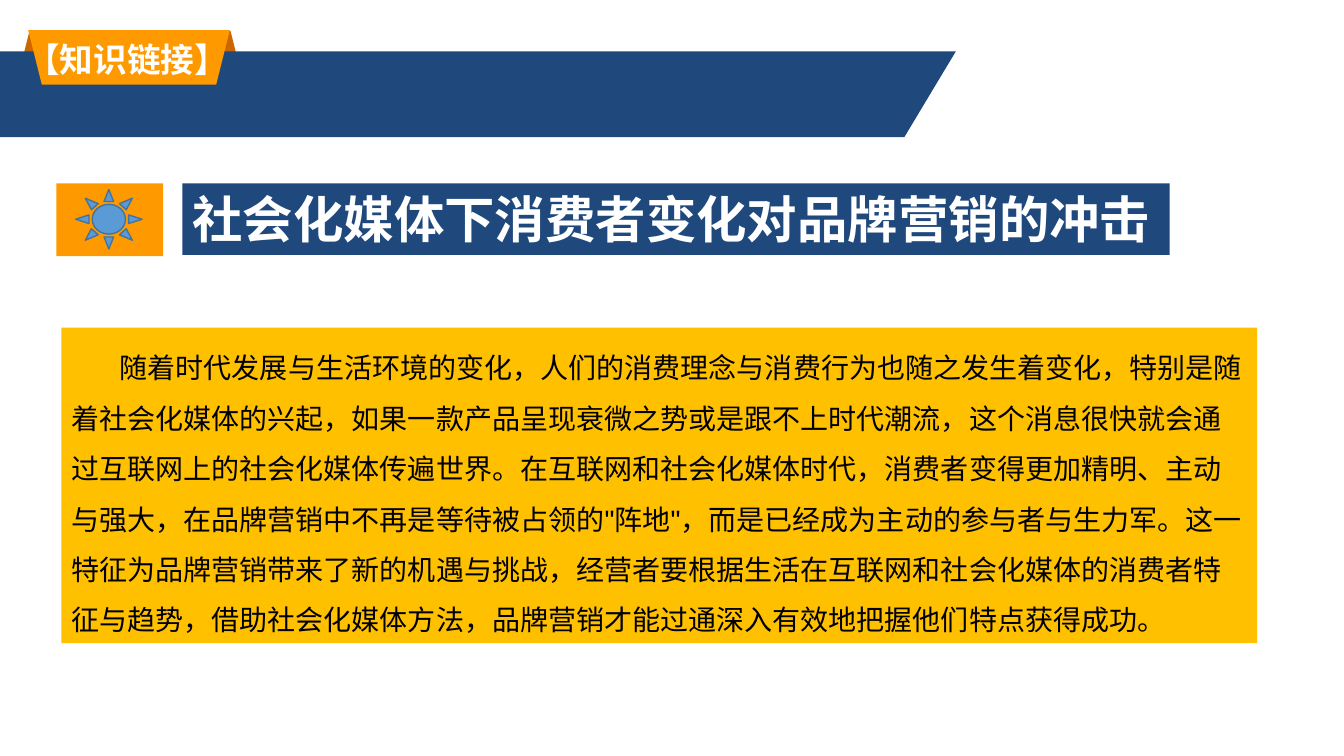
from dataclasses import dataclass

from pptx import Presentation
from pptx.enum import shapes, text
from pptx.dml.color import RGBColor
from pptx.util import Inches, Pt

COLORS = {
    "navy": "1F487C",
    "orange": "FF9900",
    "fold": "CC6600",
    "amber": "FFC000",
    "sun": "5B9BD5",
    "sun_line": "43739E",
    "white": "FFFFFF",
    "black": "000000",
}
FONT = "Arial"
BODY = (
    "随着时代发展与生活环境的变化，人们的消费理念与消费行为也随之发生着变化，"
    "特别是随着社会化媒体的兴起，如果一款产品呈现衰微之势或是跟不上时代潮流，"
    "这个消息很快就会通过互联网上的社会化媒体传遍世界。"
    "在互联网和社会化媒体时代，消费者变得更加精明、主动与强大，"
    "在品牌营销中不再是等待被占领的\"阵地\"，而是已经成为主动的参与者与生力军。"
    "这一特征为品牌营销带来了新的机遇与挑战，"
    "经营者要根据生活在互联网和社会化媒体的消费者特征与趋势，"
    "借助社会化媒体方法，品牌营销才能过通深入有效地把握他们特点获得成功。"
)
KIND = shapes.MSO_SHAPE


@dataclass
class Block:
    kind: shapes.MSO_SHAPE
    left: float
    top: float
    width: float
    height: float
    fill: str
    line: str | None = None
    flipped: bool = False


def rgb(name: str) -> RGBColor:
    return RGBColor.from_string(COLORS[name])


def paint(shape, fill: str, line: str | None = None) -> None:
    shape.shadow.inherit = False
    shape.fill.solid()
    shape.fill.fore_color.rgb = rgb(fill)
    if line:
        shape.line.color.rgb = rgb(line)
        shape.line.width = Pt(1)
    else:
        shape.line.fill.background()


def add_block(slide, block: Block):
    shape = slide.shapes.add_shape(
        block.kind, Inches(block.left), Inches(block.top),
        Inches(block.width), Inches(block.height))
    paint(shape, block.fill, block.line)
    if block.flipped:
        shape._element.spPr.xfrm.set("flipV", "1")
    return shape


def add_banner(slide) -> None:
    """Draw the header band with its slanted right end."""
    builder = slide.shapes.build_freeform(0, Inches(0.51))
    corners = [(9.48, 0.51), (8.97, 1.36), (0, 1.36)]
    builder.add_line_segments([(Inches(x), Inches(y)) for x, y in corners])
    paint(builder.convert_to_shape(), "navy")


def write(shape, wording: str, size: int, color: str, bold: bool = False,
          align=text.PP_ALIGN.LEFT, anchor=text.MSO_ANCHOR.TOP, wrap: bool = True):
    frame = shape.text_frame
    frame.word_wrap = wrap
    frame.vertical_anchor = anchor
    paragraph = frame.paragraphs[0]
    paragraph.text = wording
    paragraph.alignment = align
    font = paragraph.font
    font.name, font.size, font.bold = FONT, Pt(size), bold
    font.color.rgb = rgb(color)
    return paragraph


def main() -> None:
    presentation = Presentation()
    presentation.slide_width = Inches(13.33)
    presentation.slide_height = Inches(7.5)
    slide = presentation.slides.add_slide(presentation.slide_layouts[6])

    add_block(slide, Block(KIND.TRAPEZOID, 0.16, 0.31, 2.26, 0.53, "fold"))
    add_banner(slide)
    add_block(slide, Block(KIND.TRAPEZOID, 0.28, 0.3, 2, 0.54, "orange", flipped=True))
    label = slide.shapes.add_textbox(0, Inches(0.34), Inches(2.52), Inches(0.5))
    write(label, "【知识链接】", 24, "white", bold=True, align=text.PP_ALIGN.CENTER)

    title = add_block(slide, Block(KIND.RECTANGLE, 1.81, 1.82, 9.79, 0.71, "navy"))
    write(title, "社会化媒体下消费者变化对品牌营销的冲击", 36, "white", bold=True, wrap=False)

    panel = add_block(slide, Block(KIND.RECTANGLE, 0.61, 3.25, 11.86, 3.13, "amber"))
    body = write(panel, BODY, 20, "black", anchor=text.MSO_ANCHOR.MIDDLE)
    body.line_spacing = 1.5
    body._p.get_or_add_pPr().set("indent", str(Inches(0.48)))

    add_block(slide, Block(KIND.RECTANGLE, 0.56, 1.82, 1.06, 0.72, "orange"))
    add_block(slide, Block(KIND.SUN, 0.75, 1.88, 0.66, 0.59, "sun", line="sun_line"))

    presentation.save("out.pptx")


if __name__ == "__main__":
    main()
